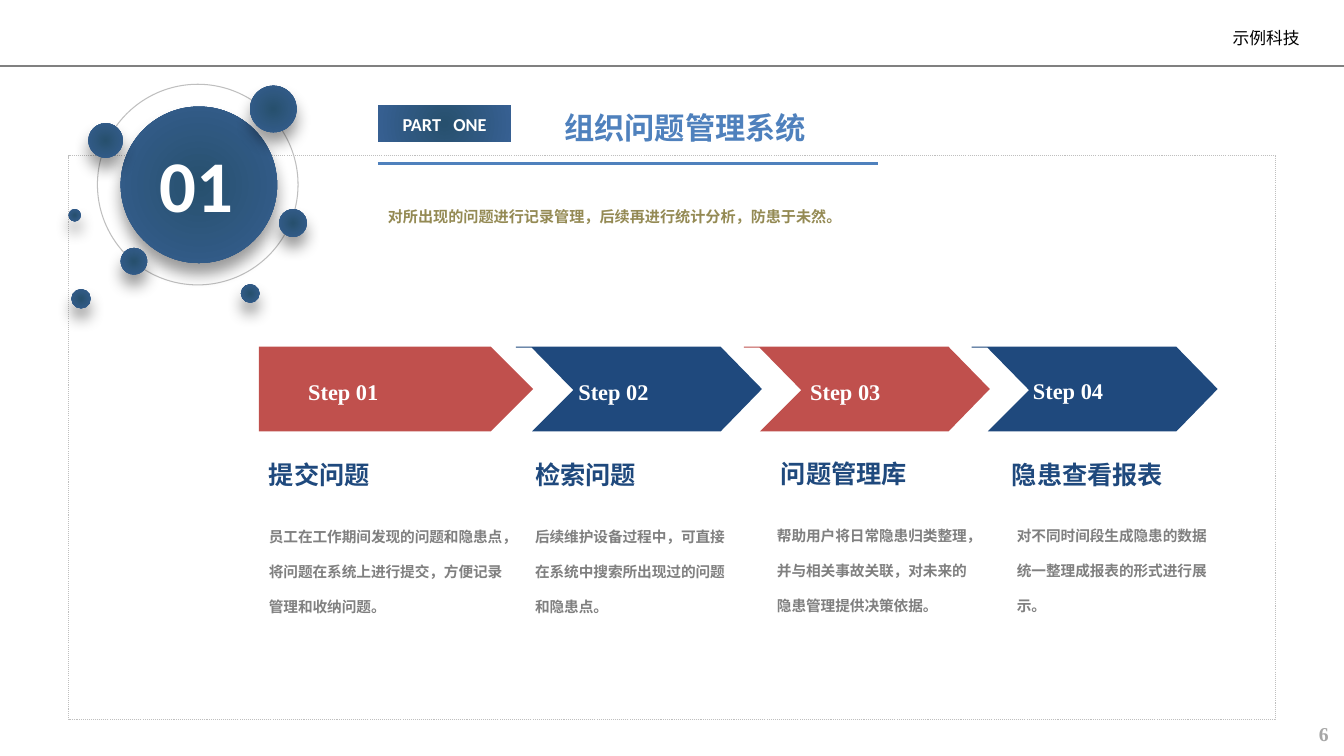
from dataclasses import dataclass

from lxml.etree import SubElement
from pptx import Presentation
from pptx.dml.color import RGBColor
from pptx.enum.dml import MSO_LINE
from pptx.enum.shapes import MSO_CONNECTOR, MSO_SHAPE
from pptx.enum.text import MSO_ANCHOR, MSO_AUTO_SIZE, PP_ALIGN
from pptx.oxml import parse_xml
from pptx.oxml.ns import nsdecls, qn
from pptx.util import Pt


@dataclass(frozen=True)
class Style:
    size: float
    font: str
    color: str


class Theme:
    navy, red, blue = "1F497D", "C0504D", "4F81BD"
    rule, outline = "808080", "BFBFBF"
    glow_in, glow_out = "27506E", "376092"
    page = Style(14, "Times New Roman", "A6A6A6")
    company = Style(12, "Arial", "000000")
    summary = Style(10.8, "Times New Roman", "948A54")
    number = Style(52, "Calibri", "FFFFFF")
    title = Style(21.6, "Calibri", "4F81BD")
    badge = Style(13, "Calibri", "FFFFFF")
    step = Style(16, "Times New Roman", "FFFFFF")
    heading = Style(18, "Calibri", "1F497D")
    body = Style(10.5, "Times New Roman", "808080")


COMPANY = "示例科技"
PAGE = "6"
NUMBER = "01"
BADGE = ("PART", " ", "ONE")
TITLE = "组织问题管理系统"
SUMMARY = "对所出现的问题进行记录管理，后续再进行统计分析，防患于未然。"

STEPS = [
    dict(label="Step 01", label_at=(213.1, 266.4), heading="提交问题", heading_at=(185, 324.7),
         body="员工在工作期间发现的问题和隐患点，将问题在系统上进行提交，方便记录管理和收纳问题。",
         body_at=(185, 360.7), body_width=187.2),
    dict(label="Step 02", label_at=(406.1, 266.4), heading="检索问题", heading_at=(375.1, 324.7),
         body="后续维护设备过程中，可直接在系统中搜索所出现过的问题和隐患点。",
         body_at=(375.1, 360.7), body_width=150.5),
    dict(label="Step 03", label_at=(571.7, 266.4), heading="问题管理库", heading_at=(550.8, 323.5),
         body="帮助用户将日常隐患归类整理，并与相关事故关联，对未来的隐患管理提供决策依据。",
         body_at=(547.9, 360), body_width=152.6),
    dict(label="Step 04", label_at=(730.8, 265.7), heading="隐患查看报表", heading_at=(715.7, 324.7),
         body="对不同时间段生成隐患的数据统一整理成报表的形式进行展示。",
         body_at=(719.3, 360), body_width=150.5),
]

MAIN_CIRCLE = (86.2, 76.1, 111.8)
SATELLITES = [
    (178.6, 61.2, 33.3), (63.1, 88, 24.7), (51, 206.5, 13.8), (86.2, 177.1, 19),
    (199.4, 149.4, 19.8), (172.1, 203, 13.3), (49, 149.4, 8.8),
]

SLIDE_W, SLIDE_H = 960, 540
ARROW_X, ARROW_Y, ARROW_W, ARROW_H = 185, 247.7, 195.8, 60.5
CHEVRON_X, CHEVRON_PITCH = 368.6, 162.75
CHEVRON = [(0, 0), (146.2, 0), (175.7, 30.2), (146.2, 60.5),
           (11.5, 60.5), (41, 31), (11.3, 0.7), (0, 0.7)]

prs = Presentation()
prs.slide_width, prs.slide_height = Pt(SLIDE_W), Pt(SLIDE_H)
slide = prs.slides.add_slide(prs.slide_layouts[6])


def rgb(color):
    return RGBColor.from_string(color)


def set_font(p, style, bold):
    p.font.size = Pt(style.size)
    p.font.name = style.font
    p.font.bold = bold
    p.font.color.rgb = rgb(style.color)


def add_text(text, x, y, w, h, style, bold=True, align=None, spacing=None, wrap=True):
    sp = slide.shapes.add_textbox(Pt(x), Pt(y), Pt(w), Pt(h))
    tf = sp.text_frame
    tf.word_wrap = wrap
    tf.auto_size = MSO_AUTO_SIZE.SHAPE_TO_FIT_TEXT
    p = tf.paragraphs[0]
    p.text = text
    if align is not None:
        p.alignment = align
    if spacing is not None:
        p.line_spacing = spacing
    set_font(p, style, bold)
    return tf


def add_shape(kind, x, y, w, h, fill=None, line=None):
    sp = slide.shapes.add_shape(kind, Pt(x), Pt(y), Pt(w), Pt(h))
    paint(sp, fill, line)
    return sp


def paint(sp, fill=None, line=None):
    sp.shadow.inherit = False
    if fill:
        sp.fill.solid()
        sp.fill.fore_color.rgb = rgb(fill)
    else:
        sp.fill.background()
    if line:
        sp.line.color.rgb = rgb(line)
        sp.line.width = Pt(0.75)
    else:
        sp.line.fill.background()


def add_glow(sp):
    sp_pr = sp._element.spPr
    sp_pr.replace(sp_pr.find(qn("a:noFill")), parse_xml(
        f'<a:gradFill {nsdecls("a")} rotWithShape="1"><a:gsLst>'
        f'<a:gs pos="0"><a:srgbClr val="{Theme.glow_in}"/></a:gs>'
        f'<a:gs pos="100000"><a:srgbClr val="{Theme.glow_out}"/></a:gs></a:gsLst>'
        '<a:path path="circle"><a:fillToRect l="50000" t="50000" r="50000" b="50000"/></a:path>'
        '</a:gradFill>'))


def add_ball(x, y, size):
    sp = add_shape(MSO_SHAPE.OVAL, x, y, size, size)
    add_glow(sp)
    effects = sp._element.spPr.find(qn("a:effectLst"))
    shadow = SubElement(effects, qn("a:outerShdw"), blurRad=str(Pt(11)), dist=str(Pt(8)),
                        dir="5400000", algn="t", rotWithShape="0")
    color = SubElement(shadow, qn("a:srgbClr"), val="000000")
    SubElement(color, qn("a:alpha"), val="40000")


def add_rule(x1, x2, y, color, width):
    ln = slide.shapes.add_connector(MSO_CONNECTOR.STRAIGHT, Pt(x1), Pt(y), Pt(x2), Pt(y))
    ln.line.color.rgb = rgb(color)
    ln.line.width = Pt(width)
    SubElement(ln._element.spPr, qn("a:effectLst"))


def add_chevron(x, y, color):
    start, *rest = [(Pt(x + dx), Pt(y + dy)) for dx, dy in CHEVRON]
    builder = slide.shapes.build_freeform(*start)
    builder.add_line_segments(rest, close=True)
    paint(builder.convert_to_shape(), color)


add_text(PAGE, 873.4, 511.9, 82.8, 24.5, Theme.page, align=PP_ALIGN.RIGHT)
frame = add_shape(MSO_SHAPE.RECTANGLE, 49, 111.2, 861.8, 402.5, line=Theme.outline)
frame.line.dash_style = MSO_LINE.ROUND_DOT
tf = add_text(COMPANY, 873.4, 18.4, 60.5, 16.6, Theme.company, bold=False, align=PP_ALIGN.JUSTIFY)
tf.vertical_anchor = MSO_ANCHOR.MIDDLE
tf.margin_left, tf.margin_right = Pt(7.2), Pt(1.4)
tf.margin_top = tf.margin_bottom = Pt(0.7)
add_rule(0, SLIDE_W, 47, Theme.rule, 1.25)

add_text(SUMMARY, 270, 138.2, 377.3, 24.5, Theme.summary, spacing=1.5)
add_shape(MSO_SHAPE.OVAL, 69.6, 60.2, 143.3, 143.3, line=Theme.outline)
add_ball(*MAIN_CIRCLE)
add_text(NUMBER, 106.6, 96.5, 67.7, 70.6, Theme.number, align=PP_ALIGN.CENTER, wrap=False)
add_text(TITLE, 396, 74.2, 189.4, 33.8, Theme.title, wrap=False)
add_rule(270, 627.1, 116.6, Theme.blue, 2.25)

badge = add_shape(MSO_SHAPE.RECTANGLE, 270, 75.3, 95, 26.2)
add_glow(badge)
badge.text_frame.vertical_anchor = MSO_ANCHOR.MIDDLE
p = badge.text_frame.paragraphs[0]
p.alignment = PP_ALIGN.CENTER
set_font(p, Theme.badge, True)
for word in BADGE:
    r = p.add_run()
    r.text = word
    if word == " ":
        r.font._element.set("spc", "590")

for ball in SATELLITES:
    add_ball(*ball)

for i, step in enumerate(STEPS):
    color = Theme.navy if i % 2 else Theme.red
    if i == 0:
        add_shape(MSO_SHAPE.PENTAGON, ARROW_X, ARROW_Y, ARROW_W, ARROW_H, color)
    else:
        add_chevron(CHEVRON_X + (i - 1) * CHEVRON_PITCH, ARROW_Y, color)
    add_text(step["label"], *step["label_at"], 100, 26.6, Theme.step)
    add_text(step["heading"], *step["heading_at"], 163.4, 28.8, Theme.heading)
    add_text(step["body"], *step["body_at"], step["body_width"], 79.9, Theme.body, spacing=2)

prs.save("out.pptx")
